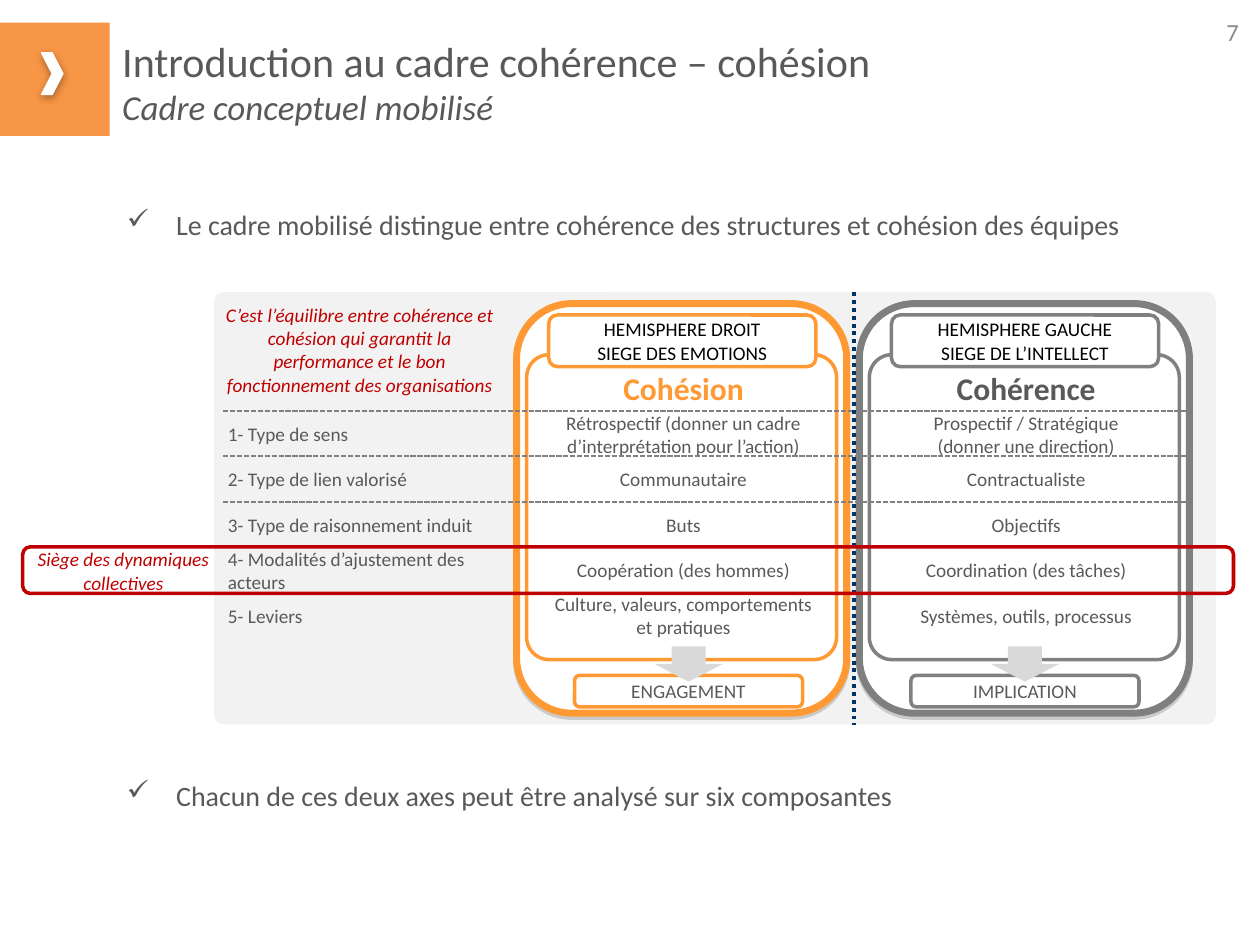
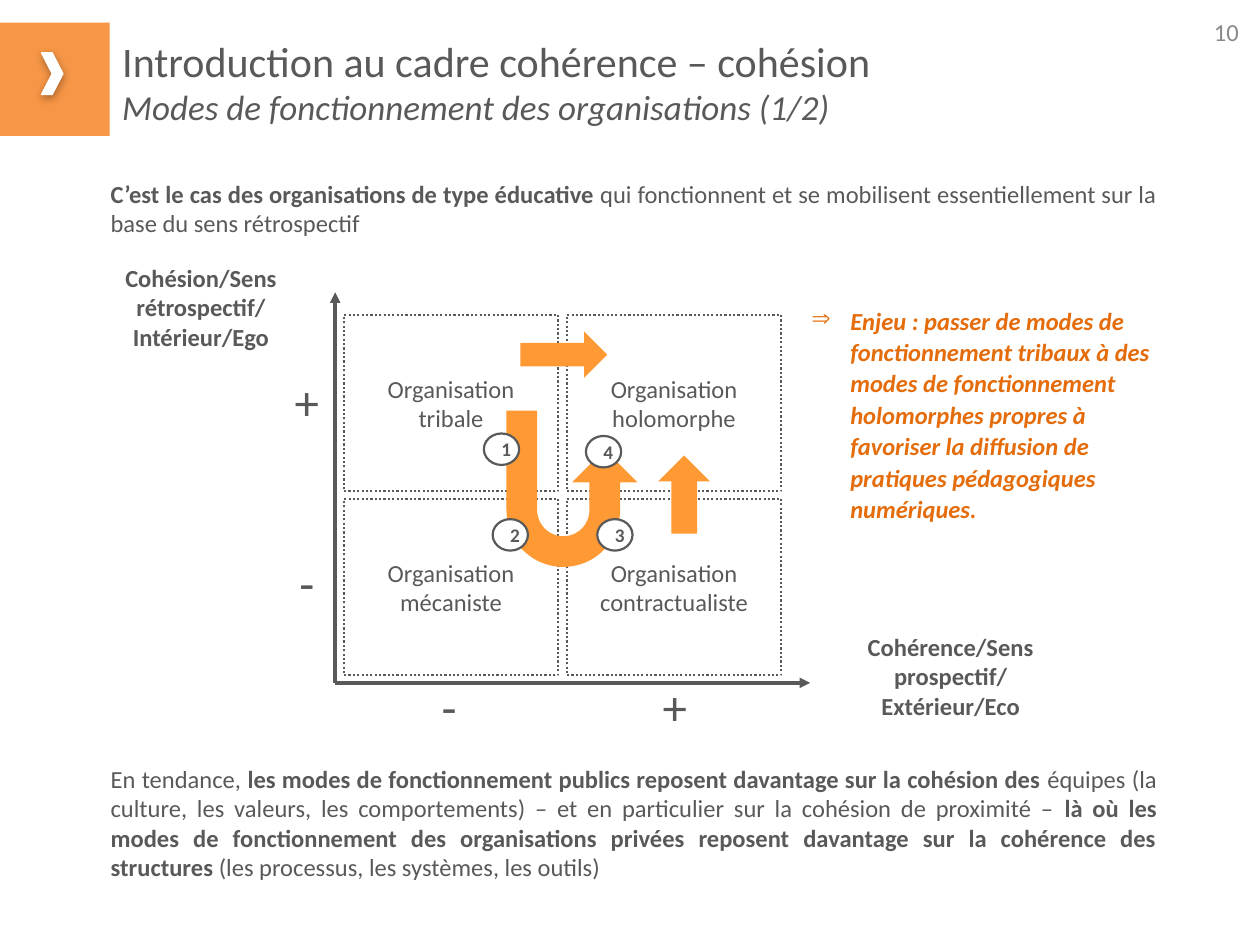
"""Builds two slides on the coherence and cohesion framework."""
from lxml.etree import SubElement
from pptx import Presentation
from pptx.dml.color import RGBColor
from pptx.enum.dml import MSO_LINE
from pptx.enum.shapes import MSO_CONNECTOR, MSO_SHAPE
from pptx.enum.text import MSO_ANCHOR, PP_ALIGN
from pptx.oxml.ns import qn
from pptx.util import Inches, Pt

FONT = "Calibri"
COLUMNS, ROWS = 100, 75
COLORS = {
    "text": "595959", "number": "898989", "band": "F79646", "white": "FFFFFF",
    "black": "000000", "panel": "F2F2F2", "gray": "808080", "frame": "7F7F7F",
    "orange": "FF9933", "challenge": "E46C0A", "red": "C00000",
    "arrow": "D9D9D9", "navy": "003366",
}
LEFT, CENTER, RIGHT, JUSTIFY = (
    PP_ALIGN.LEFT, PP_ALIGN.CENTER, PP_ALIGN.RIGHT, PP_ALIGN.JUSTIFY)


class Deck:
    """Holds the shared style and the current slide; lengths are grid columns and rows."""

    def __init__(self):
        self.deck = Presentation()
        self.deck.slide_width, self.deck.slide_height = Inches(10), Inches(7.5)
        self.column = self.deck.slide_width / COLUMNS
        self.row = self.deck.slide_height / ROWS
        self.page = None

    def place(self, *lengths):
        """Turn alternating columns and rows into slide lengths."""
        return [round(length * (self.row if index % 2 else self.column))
                for index, length in enumerate(lengths)]

    def color(self, name):
        """Return the named colour."""
        return RGBColor.from_string(COLORS[name])

    def new_page(self, subtitle, number):
        """Start a slide with its band, title and number."""
        self.page = self.deck.slides.add_slide(self.deck.slide_layouts[6])
        self.shape(MSO_SHAPE.RECTANGLE, (0, 1.8, 8.7, 9), "band")
        self.shape(MSO_SHAPE.CHEVRON, (3.3, 4.2, 1.7, 3.3), "white", "white", 0.75,
                   shadow=("black", 5))
        box = self.text((8.8, 2.3, 84.5, 8.3),
                        ["Introduction au cadre cohérence – cohésion", subtitle],
                        24, align=LEFT, inset=0.9)
        for span in box.text_frame.paragraphs[1].runs:
            span.font.size, span.font.italic = Pt(20), True
        self.text((76, 0.5, 23.3, 4), [number], 14, "number", RIGHT)

    def fill_text(self, box, paragraphs, size, color="text", align=CENTER, bold=False,
                  italic=False, anchor=MSO_ANCHOR.MIDDLE, inset=1, spacing=None,
                  before=0, after=0, bullet=None, indent=0):
        """Fill a box with paragraphs, each a string or a list of (text, bold) spans."""
        frame = box.text_frame
        frame.word_wrap, frame.vertical_anchor = True, anchor
        frame.margin_left = frame.margin_right = self.place(inset)[0]
        for index, content in enumerate(paragraphs):
            para = frame.add_paragraph() if index else frame.paragraphs[0]
            para.alignment, para.line_spacing = align, spacing
            para.space_before, para.space_after = Pt(before), Pt(after)
            spans = [(content, bold)] if isinstance(content, str) else content
            for words, strong in spans:
                span = para.add_run()
                span.text = words
                span.font.name, span.font.size = FONT, Pt(size)
                span.font.bold, span.font.italic = strong, italic
                span.font.color.rgb = self.color(color)
            if bullet:
                properties = para._p.get_or_add_pPr()
                hang = self.place(indent)[0]
                properties.set("marL", str(hang))
                properties.set("indent", str(-hang))
                SubElement(properties, qn("a:buChar"), char=bullet)
        return box

    def text(self, at, paragraphs, size, *style, **options):
        """Add a text box."""
        box = self.page.shapes.add_textbox(*self.place(*at))
        return self.fill_text(box, paragraphs, size, *style, **options)

    def shape(self, kind, at, fill=None, line=None, width=1, dash=None,
              adjust=(), shadow=None):
        """Add a preset shape; shadow is a colour and a blur in points."""
        shape = self.page.shapes.add_shape(kind, *self.place(*at))
        shape.shadow.inherit = False
        for index, value in enumerate(adjust):
            shape.adjustments[index] = value
        if fill:
            shape.fill.solid()
            shape.fill.fore_color.rgb = self.color(fill)
        else:
            shape.fill.background()
        if line:
            self.stroke(shape.line, line, width, dash)
        else:
            shape.line.fill.background()
        if shadow:
            name, blur = shadow
            effects = shape._element.spPr.find(qn("a:effectLst"))
            outer = SubElement(effects, qn("a:outerShdw"), blurRad=str(Pt(blur)),
                               dist=str(Pt(1.8)), dir="5400000", rotWithShape="0")
            tint = SubElement(outer, qn("a:srgbClr"), val=COLORS[name])
            SubElement(tint, qn("a:alpha"), val="35000")
        return shape

    def stroke(self, line, color, width, dash=None):
        """Style an outline or a connector."""
        line.color.rgb, line.width = self.color(color), Pt(width)
        if dash:
            line.dash_style = dash

    def line(self, start, end, color, width, dash=None, arrow=False):
        """Add a straight line, with an arrowhead at its end if asked."""
        line = self.page.shapes.add_connector(
            MSO_CONNECTOR.STRAIGHT, *self.place(*start, *end))
        self.stroke(line.line, color, width, dash)
        if arrow:
            SubElement(line.line._get_or_add_ln(), qn("a:tailEnd"), type="triangle")
        SubElement(line._element.spPr, qn("a:effectLst"))

    def label(self, at, paragraphs, line, color="text"):
        """Add a small rounded label."""
        box = self.shape(MSO_SHAPE.ROUNDED_RECTANGLE, at, "white", line, 2)
        self.fill_text(box, paragraphs, 11, color, inset=0)

    def cells(self, left, rows, align=CENTER):
        """Stack the comparison rows of one column."""
        for index, paragraphs in enumerate(rows):
            self.text((left, 32.9 + 3.6 * index, 22, 3.1), paragraphs, 11,
                      align=align, inset=0, spacing=Pt(13))

    def hemisphere(self, left, foot, outline, line, header, title, title_color,
                   rows, result):
        """Add one hemisphere panel, from its header down to its result."""
        rounded = MSO_SHAPE.ROUNDED_RECTANGLE
        self.shape(rounded, (left, 24.1, 26.2, 32.5), "white", outline, 4,
                   adjust=[0.167], shadow=("gray", 0))
        self.shape(rounded, (left + 0.8, 28.15, 24.6, 24.2), "white", line, 2,
                   adjust=[0.074])
        self.text((left + 2.25, 29.2, 22, 3.1), [title], 18, title_color,
                  bold=True, inset=0)
        self.cells(left + 2.25, rows)
        self.label((left + 2.55, 25, 21.2, 4.1), header, line, "black")
        self.label((foot, 53.6, 18.1, 2.5), [result], line)
        self.shape(MSO_SHAPE.DOWN_ARROW, (foot + 6.35, 51.3, 5.4, 2.8), "arrow")


def build_framework(deck):
    """Compare cohesion and coherence, row by row."""
    deck.new_page("Cadre conceptuel mobilisé", "7")
    points = {
        15.8: "Le cadre mobilisé distingue entre cohérence des structures et cohésion des équipes",
        61.1: "Chacun de ces deux axes peut être analysé sur six composantes",
    }
    for top, point in points.items():
        deck.text((9.1, top, 87.4, 4), [point], 16, align=LEFT, bullet="✓", indent=3.9)
    deck.shape(MSO_SHAPE.ROUNDED_RECTANGLE, (17, 23.2, 79.5, 34.3), "panel",
               adjust=[0.021])
    deck.hemisphere(
        68.2, 72.3, "frame", "gray", ["HEMISPHERE GAUCHE", "SIEGE DE L’INTELLECT"],
        "Cohérence", "text",
        [["Prospectif / Stratégique", "(donner une direction)"], ["Contractualiste"],
         ["Objectifs"], ["Coordination (des tâches)"], ["Systèmes, outils, processus"]],
        "IMPLICATION")
    deck.hemisphere(
        41, 45.6, "orange", "orange", ["HEMISPHERE DROIT", "SIEGE DES EMOTIONS"],
        "Cohésion", "orange",
        [["Rétrospectif (donner un cadre d’interprétation pour l’action)"],
         ["Communautaire"], ["Buts"], ["Coopération (des hommes)"],
         ["Culture, valeurs, comportements et pratiques"]],
        "ENGAGEMENT")
    for index in range(5):
        level = 32.6 + 3.62 * index
        deck.line((17.7, level), (94.3, level), "gray", 1, MSO_LINE.SQUARE_DOT)
    components = ["Type de sens", "Type de lien valorisé", "Type de raisonnement induit",
                  "Modalités d’ajustement des acteurs", "Leviers"]
    deck.cells(18.1, [[f"{rank}- {name}"] for rank, name in enumerate(components, 1)], LEFT)
    deck.line((67.8, 23.2), (67.8, 57.5), "navy", 2.25, MSO_LINE.ROUND_DOT)
    deck.text((16.8, 22.5, 23.5, 10.5),
              ["C’est l’équilibre entre cohérence et cohésion qui garantit la performance "
               "et le bon fonctionnement des organisations"], 11, "red", italic=True)
    deck.shape(MSO_SHAPE.ROUNDED_RECTANGLE, (1.8, 43.4, 96.1, 3.7), line="red", width=2)
    deck.text((1.2, 43.4, 17.2, 3.8), ["Siège des dynamiques collectives"], 11, "red",
              italic=True)


def build_modes(deck):
    """Map the four kinds of organisation and the path between them."""
    deck.new_page("Modes de fonctionnement des organisations (1/2)", "10")
    deck.text((7.8, 60.1, 85, 10.4), [[
        ("En tendance, ", False),
        ("les modes de fonctionnement publics reposent davantage sur la cohésion des ", True),
        ("équipes (la culture, les valeurs, les comportements) – et en particulier sur la "
         "cohésion de proximité – ", False),
        ("là où les modes de fonctionnement des organisations privées reposent davantage "
         "sur la cohérence des structures ", True),
        ("(les processus, les systèmes, les outils)", False),
    ]], 14, align=JUSTIFY, before=6, after=6)
    deck.text((7.8, 13.7, 85, 5.7), [[
        ("C’est le cas des organisations de type éducative ", True),
        ("qui fonctionnent et se mobilisent essentiellement sur la base du sens "
         "rétrospectif", False),
    ]], 14, align=JUSTIFY, anchor=MSO_ANCHOR.TOP, before=6, after=6)

    kinds = ["tribale", "holomorphe", "mécaniste", "contractualiste"]
    for index, kind in enumerate(kinds):
        row, column = divmod(index, 2)
        quadrant = deck.shape(
            MSO_SHAPE.RECTANGLE, (27.3 + 17.7 * column, 25 + 14.6 * row, 17, 14),
            line="text", width=1.25, dash=MSO_LINE.ROUND_DOT)
        deck.fill_text(quadrant, [f"Organisation {kind}"], 14)
    for end in [(26.6, 23.2), (64.3, 54.2)]:
        deck.line((26.6, 54.2), end, "text", 2, arrow=True)
    for sign, left, top in [("+", 22.3, 30), ("-", 22.3, 44.3),
                            ("+", 51.5, 54.2), ("-", 33.6, 54.2)]:
        deck.text((left, top, 4.1, 3.7), [sign], 28)
    for left, top, axis in [
            (5.9, 22.5, ["Cohésion/Sens rétrospectif/", "Intérieur/Ego"]),
            (65.4, 51.8, ["Cohérence/Sens prospectif/", "Extérieur/Eco"])]:
        deck.text((left, top, 20.1, 3.7), axis, 14, bold=True)

    deck.shape(MSO_SHAPE.RIGHT_ARROW, (41.3, 26.3, 6.9, 3.7), "orange")
    turn = deck.shape(MSO_SHAPE.U_TURN_ARROW, (40.2, 32.6, 10.4, 12.4), "orange",
                      adjust=[0.234, 0.25, 0.25, 0.438, 0.75])
    turn._element.spPr.find(qn("a:xfrm")).set("flipV", "1")
    rise = deck.shape(MSO_SHAPE.RIGHT_ARROW, (51.2, 37.2, 6.2, 4.1), "orange")
    rise.rotation = 270
    steps = [(38.4, 34.4), (39.1, 41.2), (47.4, 41.2), (46.5, 34.6)]
    for rank, (left, top) in enumerate(steps, 1):
        step = deck.shape(MSO_SHAPE.OVAL, (left, top, 2.8, 2.5), "white", "text", 1.25)
        deck.fill_text(step, [str(rank)], 11, bold=True)
    deck.text((63.4, 23.6, 29.1, 22.3),
              ["Enjeu : passer de modes de fonctionnement tribaux à des modes de "
               "fonctionnement holomorphes propres à favoriser la diffusion de pratiques "
               "pédagogiques numériques."], 14, "challenge", LEFT, True, True,
              MSO_ANCHOR.TOP, spacing=1.07, after=8, bullet="⇒", indent=3.1)


def main():
    """Build and save the deck."""
    deck = Deck()
    build_framework(deck)
    build_modes(deck)
    deck.deck.save("out.pptx")


if __name__ == "__main__":
    main()
